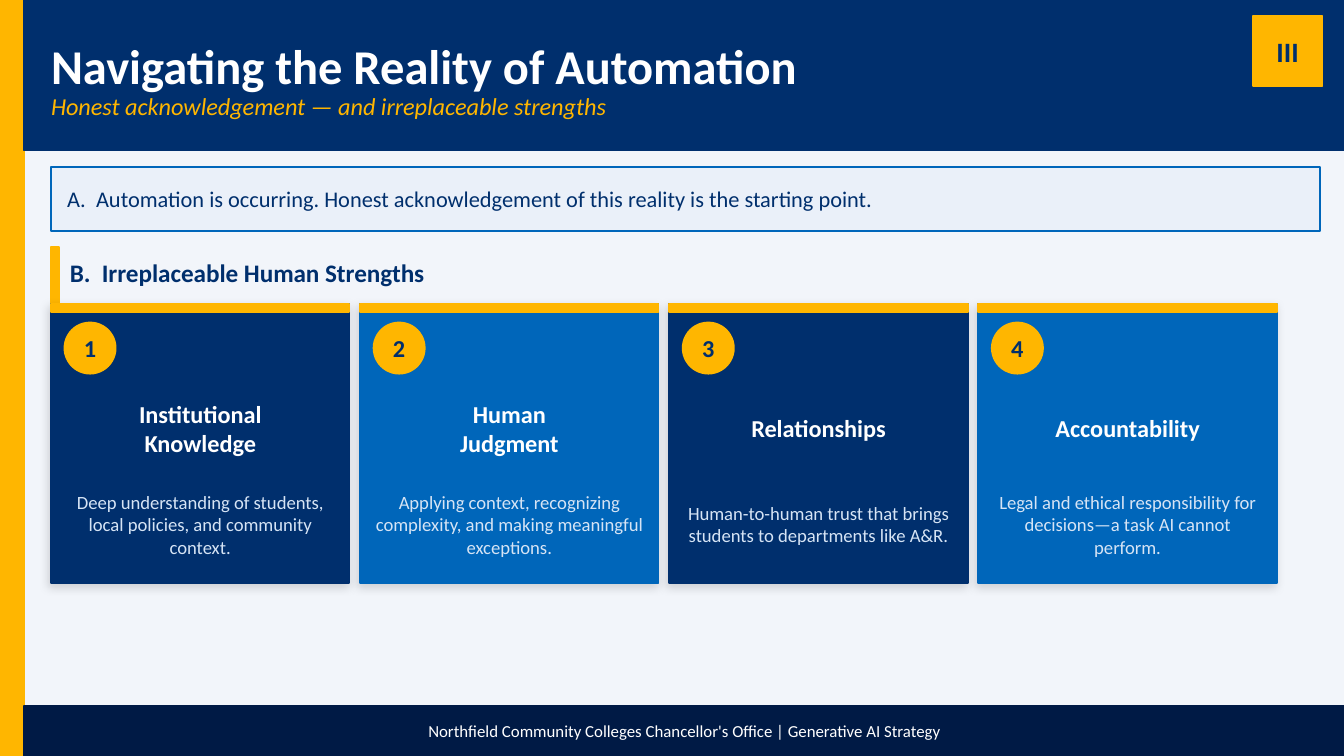
"""Build the slide on automation and irreplaceable human strengths."""
from dataclasses import dataclass

import lxml.etree
import pptx
import pptx.dml.color
import pptx.enum.shapes
import pptx.enum.text
import pptx.oxml.ns
import pptx.util

Pt = pptx.util.Pt
Shape = pptx.enum.shapes.MSO_SHAPE
Align = pptx.enum.text.PP_ALIGN
Anchor = pptx.enum.text.MSO_ANCHOR
qn = pptx.oxml.ns.qn

SECTION = "III"
TITLE = "Navigating the Reality of Automation"
SUBTITLE = "Honest acknowledgement — and irreplaceable strengths"
STATEMENT = "A.\tAutomation is occurring. Honest acknowledgement of this reality is the starting point."
STRENGTHS_HEADING = "B.\tIrreplaceable Human Strengths"
STRENGTHS = [
    ("Institutional\nKnowledge", "Deep understanding of students, local policies, and community context."),
    ("Human\nJudgment", "Applying context, recognizing complexity, and making meaningful exceptions."),
    ("Relationships", "Human-to-human trust that brings students to departments like A&R."),
    ("Accountability", "Legal and ethical responsibility for decisions—a task AI cannot perform."),
]
FOOTER = "Northfield Community Colleges Chancellor's Office | Generative AI Strategy"


@dataclass(frozen=True)
class Theme:
    """Colours, font and type sizes."""
    font: str = "Calibri"
    page: str = "F2F5FA"
    navy: str = "002F6D"
    blue: str = "0066BA"
    gold: str = "FFB600"
    pale: str = "EAF0F9"
    mist: str = "D6E4F5"
    midnight: str = "001A45"
    white: str = "FFFFFF"
    title: float = 26
    section: float = 15
    heading: float = 13.5
    label: float = 13
    statement: float = 12
    body: float = 10
    footer: float = 9


THEME = Theme()
SLIDE_W, SLIDE_H = 720, 405
STRIPE_W = 12.96
LEFT = 27.36
HEADER_H = 80.64
FOOTER_TOP = 378
CARD_TOP, CARD_W, CARD_H, CARD_GAP = 162.72, 159.84, 149.76, 5.76
ACCENT = 4.32
DISC = 27.36


def rgb(colour):
    """Turn a hex string into a colour."""
    return pptx.dml.color.RGBColor.from_string(colour)


def write(holder, text, size, colour, bold=False, italic=False,
          align=Align.LEFT, anchor=Anchor.MIDDLE, inset=0, hanging=0):
    """Fill a shape or text box with uniformly formatted text."""
    frame = holder.text_frame
    frame.word_wrap = True
    frame.vertical_anchor = anchor
    frame.margin_left = Pt(inset)
    frame.margin_right = frame.margin_top = frame.margin_bottom = 0
    frame.text = text
    for paragraph in frame.paragraphs:
        paragraph.alignment = align
        if hanging:
            properties = paragraph._p.get_or_add_pPr()
            properties.set("marL", str(Pt(hanging)))
            properties.set("indent", str(-Pt(hanging)))
        for run in paragraph.runs:
            run.font.name = THEME.font
            run.font.size = Pt(size)
            run.font.bold = bold
            run.font.italic = italic
            run.font.color.rgb = rgb(colour)


def add_block(slide, box, fill, line=None, kind=Shape.RECTANGLE):
    """Add a flat filled shape with a one-point outline."""
    block = slide.shapes.add_shape(kind, *map(Pt, box))
    block.shadow.inherit = False
    block.fill.solid()
    block.fill.fore_color.rgb = rgb(fill)
    block.line.color.rgb = rgb(line or fill)
    block.line.width = Pt(1)
    return block


def add_label(slide, box, *args, **kwargs):
    """Add a text box."""
    write(slide.shapes.add_textbox(*map(Pt, box)), *args, **kwargs)


def add_soft_shadow(block):
    """Give a shape a faint outer shadow."""
    effects = block._element.spPr.find(qn("a:effectLst"))
    shadow = lxml.etree.SubElement(effects, qn("a:outerShdw"), blurRad=str(Pt(5)),
                                   dist=str(Pt(2)), dir=str(135 * 60000),
                                   algn="bl", rotWithShape="0")
    black = lxml.etree.SubElement(shadow, qn("a:srgbClr"), val="000000")
    lxml.etree.SubElement(black, qn("a:alpha"), val="15000")


def add_header(slide):
    """Add the side stripe, title band and section badge."""
    add_block(slide, (0, 0, STRIPE_W, SLIDE_H), THEME.gold)
    add_block(slide, (STRIPE_W, 0, SLIDE_W - STRIPE_W, HEADER_H), THEME.navy)
    badge = add_block(slide, (671.04, 8.64, 37.44, 37.44), THEME.gold)
    write(badge, SECTION, THEME.section, THEME.navy, bold=True, align=Align.CENTER)
    add_label(slide, (LEFT, 7.2, 633.6, 43.2), TITLE, THEME.title, THEME.white,
              bold=True, anchor=Anchor.BOTTOM)
    add_label(slide, (LEFT, 48.96, 633.6, 27.36), SUBTITLE, THEME.label, THEME.gold,
              italic=True, anchor=Anchor.TOP)


def add_points(slide):
    """Add the opening statement and the strengths heading."""
    statement = add_block(slide, (LEFT, 89.28, 679.68, 34.56), THEME.pale, THEME.blue)
    write(statement, STATEMENT, THEME.statement, THEME.navy, inset=8.64, hanging=15.5)
    add_block(slide, (LEFT, 132.48, ACCENT, 30.24), THEME.gold)
    add_label(slide, (37.44, 132.48, 648, 27.36), STRENGTHS_HEADING, THEME.heading,
              THEME.navy, bold=True, hanging=17.1)


def add_card(slide, index, name, detail):
    """Add one numbered strength card."""
    left = LEFT + index * (CARD_W + CARD_GAP)
    fill = (THEME.navy, THEME.blue)[index % 2]
    add_soft_shadow(add_block(slide, (left, CARD_TOP, CARD_W, CARD_H), fill))
    add_block(slide, (left, CARD_TOP, CARD_W, ACCENT), THEME.gold)
    disc = add_block(slide, (left + 7.2, CARD_TOP + 10.08, DISC, DISC), THEME.gold,
                     kind=Shape.OVAL)
    write(disc, str(index + 1), THEME.label, THEME.navy, bold=True, align=Align.CENTER)
    for text, pad, top, height, size, colour, bold in (
        (name, 4.32, 43.2, 46.8, THEME.label, THEME.white, True),
        (detail, 5.76, 92.16, 51.84, THEME.body, THEME.mist, False),
    ):
        add_label(slide, (left + pad, CARD_TOP + top, CARD_W - 2 * pad, height),
                  text, size, colour, bold=bold, align=Align.CENTER)


def main():
    """Assemble and save the slide."""
    deck = pptx.Presentation()
    deck.slide_width, deck.slide_height = Pt(SLIDE_W), Pt(SLIDE_H)
    slide = deck.slides.add_slide(deck.slide_layouts[6])
    slide.background.fill.solid()
    slide.background.fill.fore_color.rgb = rgb(THEME.page)
    add_header(slide)
    add_points(slide)
    for index, (name, detail) in enumerate(STRENGTHS):
        add_card(slide, index, name, detail)
    footer = add_block(slide, (STRIPE_W, FOOTER_TOP, SLIDE_W - STRIPE_W,
                               SLIDE_H - FOOTER_TOP), THEME.midnight)
    write(footer, FOOTER, THEME.footer, THEME.white, align=Align.CENTER)
    deck.save("out.pptx")


if __name__ == "__main__":
    main()
